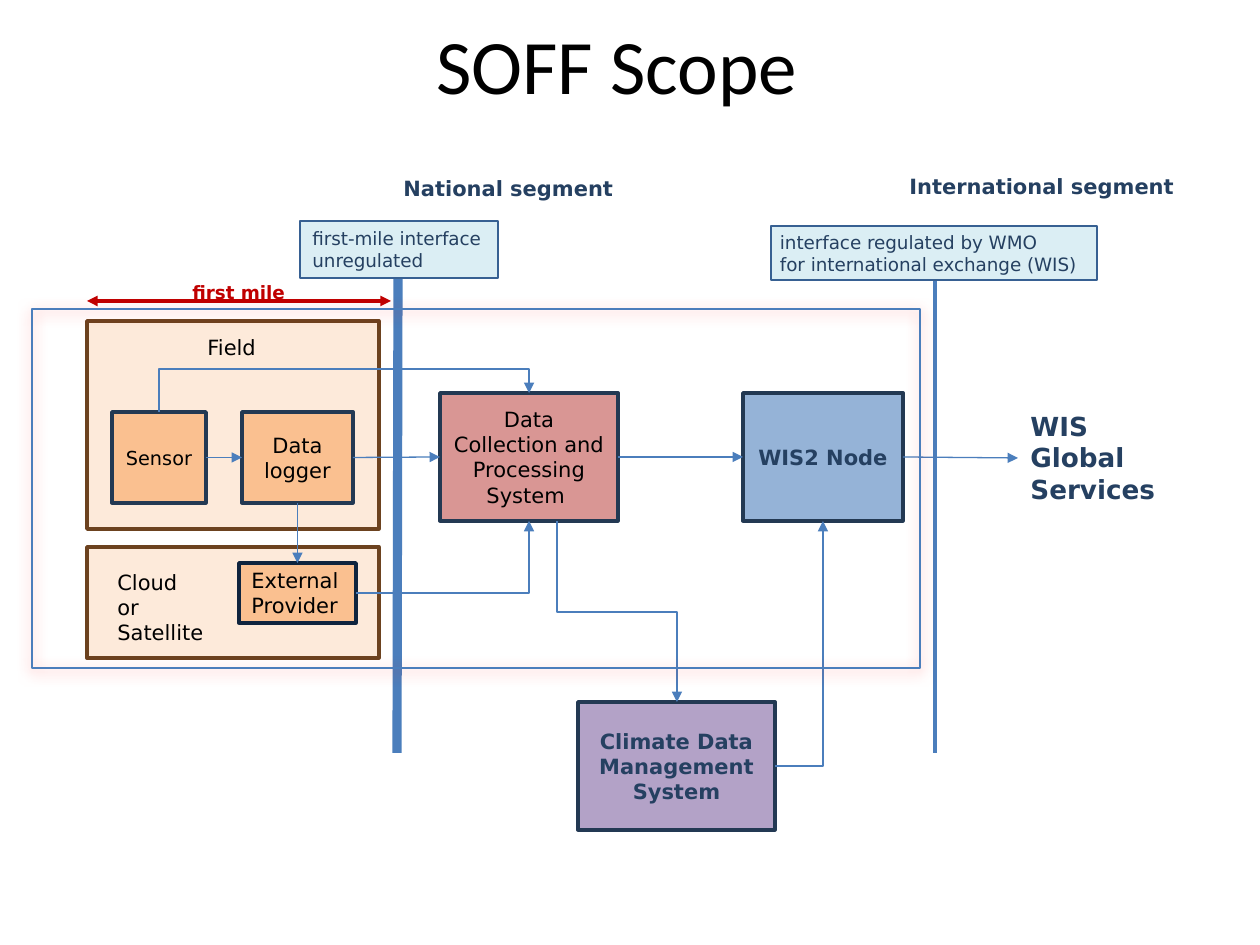
from lxml.etree import SubElement
from pptx import Presentation
from pptx.dml.color import RGBColor
from pptx.enum.shapes import MSO_CONNECTOR, MSO_SHAPE
from pptx.enum.text import MSO_ANCHOR, MSO_AUTO_SIZE, PP_ALIGN
from pptx.oxml.ns import qn
from pptx.util import Emu, Pt

EMU_PER_PX = 914400 / 126
COLORS = {
    "black": "000000", "navy": "254061", "outline": "233953", "ink": "0F243E",
    "brown": "6C421F", "cream": "FDEADA", "orange": "FAC090", "rose": "D99694",
    "blue": "95B3D7", "violet": "B3A2C7", "ice": "DBEEF4", "label_edge": "376092",
    "flow": "4B7EBC", "red": "C00000", "glow": "FF0000",
}


def px(length):
    return Emu(round(length * EMU_PER_PX))


def color(name):
    return RGBColor.from_string(COLORS[name])


def write(frame, lines, size, ink="black", bold=False, align=PP_ALIGN.LEFT,
          font="DejaVu Sans"):
    """Fill a text frame with one paragraph per line."""
    for i, line in enumerate(lines):
        paragraph = frame.paragraphs[0] if i == 0 else frame.add_paragraph()
        paragraph.alignment = align
        run = paragraph.add_run()
        run.text = line
        run.font.name = font
        run.font.size = Pt(size)
        run.font.bold = bold
        run.font.color.rgb = color(ink)


def add_box(slide, place, fill, edge, width=2):
    box = slide.shapes.add_shape(MSO_SHAPE.RECTANGLE, *map(px, place))
    box.shadow.inherit = False
    if fill:
        box.fill.solid()
        box.fill.fore_color.rgb = color(fill)
    else:
        box.fill.background()
    box.line.color.rgb = color(edge)
    box.line.width = Pt(width)
    return box


def add_node(slide, place, fill, lines, size=12, edge="outline", ink="black",
             bold=False, align=PP_ALIGN.CENTER):
    node = add_box(slide, place, fill, edge)
    node.text_frame.word_wrap = True
    node.text_frame.vertical_anchor = MSO_ANCHOR.MIDDLE
    write(node.text_frame, lines, size, ink, bold, align)
    return node


def add_interface(slide, place, lines, inset=None):
    """Label box that names the interface below it."""
    label = add_box(slide, place, "ice", "label_edge", 0.75)
    frame = label.text_frame
    frame.word_wrap = False
    frame.vertical_anchor = MSO_ANCHOR.TOP
    if inset:
        frame.margin_left = frame.margin_right = px(inset[0])
        frame.margin_top = frame.margin_bottom = px(inset[1])
    write(frame, lines, 10.5, "navy")


def add_text(slide, place, lines, size, ink="black", bold=False, wrap=True):
    text = slide.shapes.add_textbox(*map(px, place))
    text.text_frame.word_wrap = wrap
    text.text_frame.auto_size = MSO_AUTO_SIZE.SHAPE_TO_FIT_TEXT
    write(text.text_frame, lines, size, ink, bold)
    return text


def add_line(slide, start, end, kind=MSO_CONNECTOR.STRAIGHT, ink="flow",
             width=0.75, arrows=("tailEnd",)):
    line = slide.shapes.add_connector(kind, *map(px, (*start, *end)))
    line.line.color.rgb = color(ink)
    line.line.width = Pt(width)
    for arrow in arrows:
        SubElement(line.line._get_or_add_ln(), qn(f"a:{arrow}"), type="triangle")
    SubElement(line._element.spPr, qn("a:effectLst"))
    return line


def join(slide, source, source_side, target, target_side):
    arrow = add_line(slide, (0, 0), (0, 0))
    arrow.begin_connect(source, source_side)
    arrow.end_connect(target, target_side)


def add_corner(slide, start, end):
    """Arrow that runs sideways, then turns once up or down."""
    corner = add_line(slide, start, end, MSO_CONNECTOR.ELBOW)
    corner._element.spPr.find(qn("a:prstGeom")).set("prst", "bentConnector2")


def add_step(slide, start, end, turn):
    """Arrow that leaves and arrives vertically; turn is the y of its level part."""
    (x1, y1), (x2, y2) = start, end
    mid_x, mid_y = (x1 + x2) / 2, (y1 + y2) / 2
    half_w, half_h = (x2 - x1) / 2, (y2 - y1) / 2
    # Ends before the quarter turn that makes the first leg vertical
    step = add_line(slide, (mid_x - half_h, mid_y + half_w),
                    (mid_x + half_h, mid_y - half_w), MSO_CONNECTOR.ELBOW)
    properties = step._element.spPr
    properties.find(qn("a:xfrm")).set("rot", "5400000")
    geometry = properties.find(qn("a:prstGeom"))
    adjustments = geometry.find(qn("a:avLst"))
    if adjustments is None:
        adjustments = SubElement(geometry, qn("a:avLst"))
    share = round((turn - y1) / (y2 - y1) * 100000)
    SubElement(adjustments, qn("a:gd"), name="adj1", fmla=f"val {share}")


def add_scope_frame(slide, place):
    scope = add_box(slide, place, None, "flow", 0.75)
    effects = scope._element.spPr.find(qn("a:effectLst"))
    shadow = SubElement(effects, qn("a:outerShdw"), blurRad=str(Pt(8.6)),
                        dist=str(Pt(1.8)), dir="5400000", rotWithShape="0")
    tint = SubElement(shadow, qn("a:srgbClr"), val=COLORS["glow"])
    SubElement(tint, qn("a:alpha"), val="68000")


def add_title(slide, place, title):
    holder = slide.shapes.title
    holder.left, holder.top, holder.width, holder.height = map(px, place)
    holder.text_frame.vertical_anchor = MSO_ANCHOR.MIDDLE
    write(holder.text_frame, [title], 44, align=PP_ALIGN.CENTER, font="Calibri")


def main():
    deck = Presentation()
    deck.slide_width, deck.slide_height = px(1260), px(945)
    slide = deck.slides.add_slide(deck.slide_layouts[5])
    add_title(slide, (74, 11, 1086, 106), "SOFF Scope")

    for top, height in ((547, 111), (321, 208)):
        add_box(slide, (87, top, 292, height), "cream", "brown")
    sensor = add_node(slide, (112, 412, 94, 91), "orange", ["Sensor"], size=11)
    logger = add_node(slide, (242, 412, 111, 91), "orange", ["Data logger"])
    collection = add_node(slide, (440, 393, 178, 128), "rose",
                          ["Data Collection and Processing System "])
    wis2 = add_node(slide, (743, 393, 160, 128), "blue", ["WIS2 Node"],
                    ink="navy", bold=True)
    join(slide, sensor, 3, logger, 1)
    join(slide, logger, 3, collection, 1)
    join(slide, collection, 3, wis2, 1)

    add_line(slide, (398, 277), (397, 753), width=5.25, arrows=())
    add_line(slide, (935, 275), (935, 753), width=2, arrows=())
    add_text(slide, (195, 328, 81, 42), ["Field"], 12, wrap=False)
    add_text(slide, (391, 169, 236, 38), ["National segment"], 12, "navy", True, False)
    add_text(slide, (897, 167, 294, 38), ["International segment"], 12, "navy", True,
             False)

    external = add_node(slide, (239, 563, 117, 60), "orange", ["External", "Provider"],
                        edge="ink", align=PP_ALIGN.LEFT)
    add_corner(slide, (356, 593), (529, 521))
    join(slide, logger, 2, external, 0)
    add_line(slide, (87, 301), (391, 301), ink="red", width=2,
             arrows=("headEnd", "tailEnd"))
    add_text(slide, (180, 275, 120, 35), ["first mile"], 10.5, "red", True)
    add_step(slide, (159, 412), (529, 393), turn=369)
    add_interface(slide, (771, 226, 326, 54),
                  ["interface regulated by WMO", "for international exchange (WIS)"],
                  inset=(9, 5))
    add_interface(slide, (300, 221, 198, 57), ["first-mile interface", "unregulated"])
    add_text(slide, (105, 563, 111, 89), ["Cloud or Satellite"], 12)

    add_node(slide, (578, 702, 197, 128), "violet", ["Climate Data Management System"],
             ink="navy", bold=True)
    add_step(slide, (557, 521), (677, 702), turn=612)
    add_corner(slide, (775, 766), (823, 521))
    services = add_text(slide, (1018, 404, 156, 108), ["WIS", "Global Services"], 15,
                        "navy", True)
    join(slide, wis2, 3, services, 1)
    add_scope_frame(slide, (32, 309, 888, 359))
    deck.save("out.pptx")


if __name__ == "__main__":
    main()
